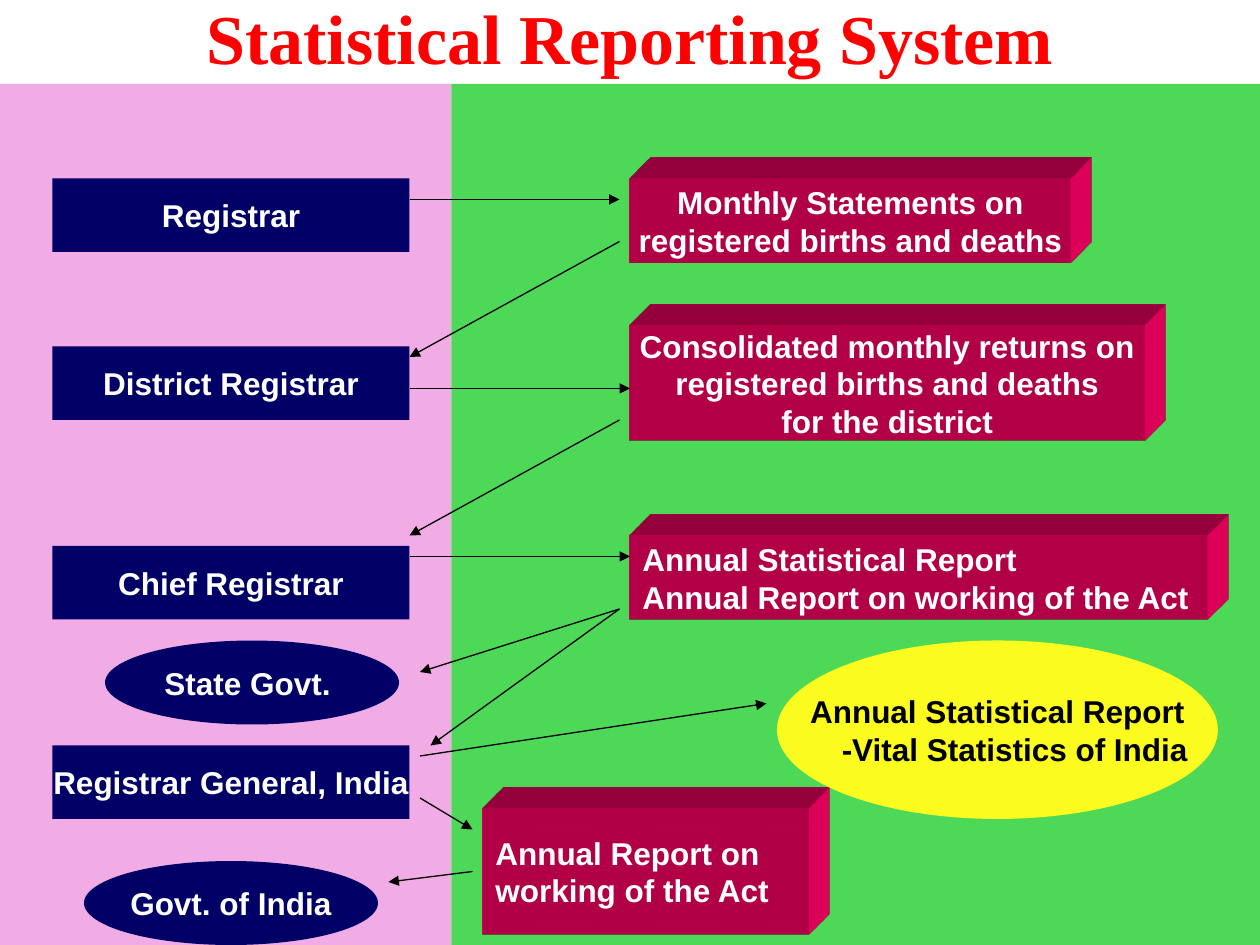
from lxml.etree import SubElement
from pptx import Presentation
from pptx.dml.color import RGBColor
from pptx.enum.shapes import MSO_CONNECTOR, MSO_SHAPE
from pptx.enum.text import MSO_ANCHOR, MSO_AUTO_SIZE, PP_ALIGN
from pptx.oxml import parse_xml
from pptx.oxml.ns import nsdecls, qn
from pptx.util import Cm, Pt

NAVY, CRIMSON, YELLOW = "000066", "FF0066", "FBFB1F"
WHITE, BLACK, RED = "FFFFFF", "000000", "FF0000"
PINK, GREEN = "F1ABE5", "4ED858"

OFFICES = [
    ("Registrar", 17),
    ("District Registrar", 33),
    ("Chief Registrar", 52),
    ("Registrar General, India", 71),
]
GOVERNMENTS = [("State Govt. ", 10, 61), ("Govt. of India", 8, 82)]
REPORTS = [
    (["Monthly Statements on", "registered births and deaths"],
     (60, 17, 42, 8), PP_ALIGN.CENTER),
    (["Consolidated monthly returns on", "registered births and deaths", "for the district"],
     (60, 31, 49, 11), PP_ALIGN.CENTER),
    (["Annual Statistical Report", "Annual Report on working of the Act"],
     (60, 51, 55, 8), PP_ALIGN.LEFT),
    (["Annual Report on", "working of the Act"],
     (46, 77, 31, 12), PP_ALIGN.LEFT),
]
ARROWS = [
    ((39, 19), (59, 19)),
    ((59, 23), (39, 34)),
    ((39, 37), (60, 37)),
    ((59, 40), (39, 51)),
    ((39, 53), (60, 53)),
    ((59, 58), (40, 64)),
    ((59, 58), (41, 71)),
    ((40, 72), (73, 67)),
    ((40, 76), (45, 79)),
    ((45, 83), (37, 84)),
]


def grid(*steps):
    """Convert steps of a twelfth of an inch to lengths."""
    return [Cm(step * 2.54 / 12) for step in steps]


def color(hex_string):
    """Return the colour for a hex string."""
    return RGBColor.from_string(hex_string)


def write_run(paragraph, text, size, font_name, hex_color):
    """Add one bold run to a paragraph."""
    run = paragraph.add_run()
    run.text = text
    run.font.size = Pt(size)
    run.font.name = font_name
    run.font.bold = True
    run.font.color.rgb = color(hex_color)


def add_title(slide, text):
    """Place and fill the title placeholder."""
    title = slide.shapes.title
    title.left, title.top, title.width, title.height = grid(6, 0, 108, 7)
    frame = title.text_frame
    frame.auto_size = MSO_AUTO_SIZE.NONE
    frame.vertical_anchor = MSO_ANCHOR.MIDDLE
    paragraph = frame.paragraphs[0]
    paragraph.alignment = PP_ALIGN.CENTER
    write_run(paragraph, text, 40, "Times New Roman", RED)


def add_block(slide, kind, box, fill, lines=(), text_color=WHITE, alignment=PP_ALIGN.CENTER):
    """Add a flat filled shape with one paragraph per line of text."""
    shape = slide.shapes.add_shape(kind, *grid(*box))
    shape.shadow.inherit = False
    shape.fill.solid()
    shape.fill.fore_color.rgb = color(fill)
    shape.line.fill.background()
    frame = shape.text_frame
    frame.word_wrap = False
    frame.vertical_anchor = MSO_ANCHOR.MIDDLE
    for index, line in enumerate(lines):
        paragraph = frame.add_paragraph() if index else frame.paragraphs[0]
        paragraph.alignment = alignment
        write_run(paragraph, line, 18, "Arial", text_color)
    return shape


def extrude(shape, hex_color):
    """Give a shape depth towards the top right."""
    properties = shape.fill._xPr
    properties.append(parse_xml(
        f'<a:scene3d {nsdecls("a")}><a:camera prst="legacyObliqueTopRight"/>'
        '<a:lightRig rig="legacyFlat3" dir="b"/></a:scene3d>'))
    properties.append(parse_xml(
        f'<a:sp3d {nsdecls("a")} extrusionH="430200" prstMaterial="legacyMatte">'
        '<a:bevelT w="13500" h="13500" prst="angle"/>'
        '<a:bevelB w="13500" h="13500" prst="angle"/>'
        f'<a:extrusionClr><a:srgbClr val="{hex_color}"/></a:extrusionClr></a:sp3d>'))


def add_arrow(slide, start, end):
    """Add a thin black arrow between two grid points."""
    arrow = slide.shapes.add_connector(MSO_CONNECTOR.STRAIGHT, *grid(*start, *end))
    arrow.line.color.rgb = color(BLACK)
    arrow.line.width = Pt(0.75)
    SubElement(arrow.line._get_or_add_ln(), qn("a:tailEnd"), type="triangle")
    SubElement(arrow._element.spPr, qn("a:effectLst"))


def main():
    """Build and save the slide."""
    presentation = Presentation()
    presentation.slide_width, presentation.slide_height = grid(120, 90)
    slide = presentation.slides.add_slide(presentation.slide_layouts[5])

    add_title(slide, "Statistical Reporting System")
    add_block(slide, MSO_SHAPE.RECTANGLE, (0, 8, 43, 82), PINK)
    add_block(slide, MSO_SHAPE.RECTANGLE, (43, 8, 77, 82), GREEN)

    for name, top in OFFICES:
        add_block(slide, MSO_SHAPE.RECTANGLE, (5, top, 34, 7), NAVY, [name])
    for lines, box, alignment in REPORTS:
        report = add_block(slide, MSO_SHAPE.RECTANGLE, box, CRIMSON, lines, alignment=alignment)
        extrude(report, CRIMSON)
    for name, left, top in GOVERNMENTS:
        add_block(slide, MSO_SHAPE.OVAL, (left, top, 28, 8), NAVY, [name])

    national_report = add_block(
        slide, MSO_SHAPE.OVAL, (74, 61, 42, 17), YELLOW,
        ["Annual Statistical Report", "-Vital Statistics of India"], BLACK)
    subtitle = national_report.text_frame.paragraphs[1]
    subtitle._p.get_or_add_pPr().set("marL", str(Cm(0.7)))

    for start, end in ARROWS:
        add_arrow(slide, start, end)
    presentation.save("out.pptx")


if __name__ == "__main__":
    main()
